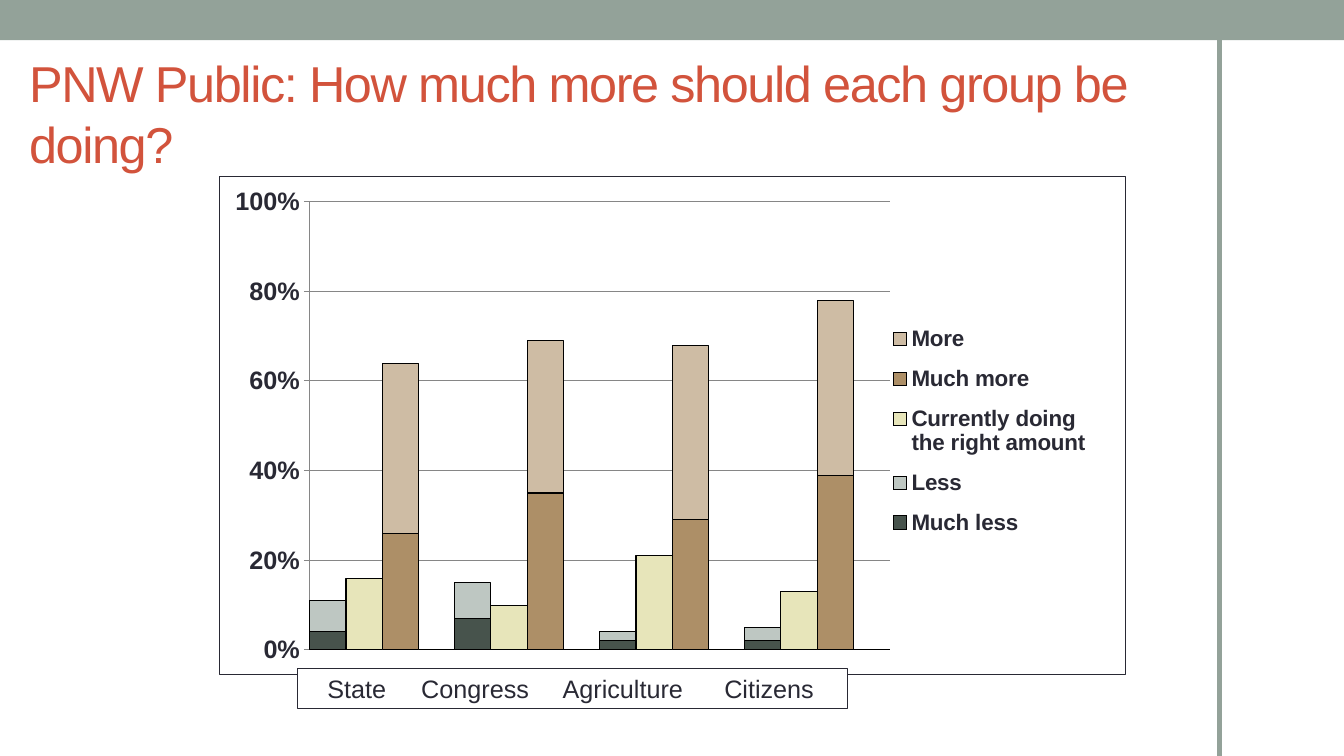
from dataclasses import dataclass

from lxml.etree import SubElement
from pptx import Presentation
from pptx.chart.chart import Chart
from pptx.chart.data import CategoryChartData
from pptx.dml.color import RGBColor
from pptx.enum.chart import (XL_CHART_TYPE, XL_LEGEND_POSITION,
                             XL_TICK_LABEL_POSITION, XL_TICK_MARK)
from pptx.enum.shapes import MSO_CONNECTOR, MSO_SHAPE
from pptx.enum.text import MSO_ANCHOR, PP_ALIGN
from pptx.oxml import parse_xml
from pptx.oxml.ns import nsdecls, qn
from pptx.slide import Slide
from pptx.util import Pt

FACE = "Arial"
INK = "292934"
SAGE = "93A299"
GRID = "868686"
GROUPS = ["State", "Congress", "Agriculture", "Citizens"]
SLOTS = 4  # less, right amount, more, gap


@dataclass
class Answer:
    name: str
    slot: int
    shares: list[float]
    color: str


ANSWERS = [
    Answer("Much less", 0, [0.04, 0.07, 0.02, 0.02], "47534C"),
    Answer("Less", 0, [0.07, 0.08, 0.02, 0.03], "BEC7C2"),
    Answer("Currently doing the right amount", 1, [0.16, 0.10, 0.21, 0.13], "E7E5BA"),
    Answer("Much more", 2, [0.26, 0.35, 0.29, 0.39], "AD8F67"),
    Answer("More", 2, [0.38, 0.34, 0.39, 0.39], "CEBCA4"),
]


def paint(item, color: str) -> None:
    """Give a fill, or the fill of a line, one solid colour."""
    item.solid()
    item.fore_color.rgb = RGBColor.from_string(color)


def style(font, size: float, color: str = INK, bold: bool = False) -> None:
    font.name, font.size, font.bold = FACE, Pt(size), bold
    paint(font.fill, color)


def stroke(line, color: str, width: float = 0.75) -> None:
    paint(line.fill, color)
    line.width = Pt(width)


def add_frame(slide: Slide) -> None:
    """Draw the top band and the rule at the right."""
    band = slide.shapes.add_shape(MSO_SHAPE.RECTANGLE, 0, 0, Pt(960), Pt(28.8))
    band.shadow.inherit = False
    paint(band.fill, SAGE)
    band.line.fill.background()
    rule = slide.shapes.add_connector(
        MSO_CONNECTOR.STRAIGHT, Pt(871.2), Pt(27.4), Pt(871.2), Pt(540))
    stroke(rule.line, SAGE, 3.25)
    SubElement(rule._element.spPr, qn("a:effectLst"))


def add_title(slide: Slide) -> None:
    box = slide.shapes.add_textbox(Pt(13.7), Pt(41.8), Pt(803), Pt(77.8))
    frame = box.text_frame
    frame.word_wrap = True
    frame.vertical_anchor = MSO_ANCHOR.MIDDLE
    frame.text = "PNW Public: How much more should each group be doing?"
    run = frame.paragraphs[0].runs[0]
    style(run.font, 36, "D2533C")
    run._r.get_or_add_rPr().set("spc", "-100")


def place(part, index: int, x: float, y: float, w: float, h: float,
          inner: bool = False) -> None:
    """Fix a chart part at fractions of the chart area."""
    for old in part.findall(qn("c:layout")):
        part.remove(old)
    target = '<c:layoutTarget val="inner"/>' if inner else ""
    part.insert(index, parse_xml(
        f'<c:layout {nsdecls("c")}><c:manualLayout>{target}'
        '<c:xMode val="edge"/><c:yMode val="edge"/>'
        f'<c:x val="{x}"/><c:y val="{y}"/><c:w val="{w}"/><c:h val="{h}"/>'
        '</c:manualLayout></c:layout>'))


def style_axes(chart: Chart) -> None:
    groups = chart.category_axis
    groups.tick_label_position = XL_TICK_LABEL_POSITION.NONE
    groups.major_tick_mark = XL_TICK_MARK.NONE
    groups.has_major_gridlines = False
    stroke(groups.format.line, "000000")
    shares = chart.value_axis
    shares.minimum_scale, shares.maximum_scale, shares.major_unit = 0, 1, 0.2
    shares.major_tick_mark = XL_TICK_MARK.OUTSIDE
    shares.tick_labels.number_format = "0%"
    shares.tick_labels.number_format_is_linked = False
    style(shares.tick_labels.font, 18, bold=True)
    stroke(shares.format.line, GRID)
    stroke(shares.major_gridlines.format.line, GRID)


def add_bars(slide: Slide) -> None:
    data = CategoryChartData(number_format="0%")
    count = SLOTS * len(GROUPS)
    data.categories = [str(n + 1) for n in range(count)]
    for answer in ANSWERS:
        row: list[float | None] = [None] * count
        row[answer.slot::SLOTS] = answer.shares
        data.add_series(answer.name, row)
    chart = slide.shapes.add_chart(
        XL_CHART_TYPE.COLUMN_STACKED, Pt(156.2), Pt(126), Pt(648), Pt(356.4), data).chart
    chart.has_title = False
    style(chart.font, 10)
    plot = chart.plots[0]
    plot.gap_width, plot.overlap, plot.vary_by_categories = 0, 100, False
    for series, answer in zip(plot.series, ANSWERS):
        paint(series.format.fill, answer.color)
        stroke(series.format.line, "000000")
    style_axes(chart)
    chart.has_legend = True
    legend = chart.legend
    legend.position = XL_LEGEND_POSITION.RIGHT
    legend.include_in_layout = False
    style(legend.font, 16, bold=True)
    place(legend._element, 1, 0.73, 0.27, 0.24, 0.48)
    area = chart._chartSpace.find(qn("c:chart"))
    place(area.find(qn("c:plotArea")), 0, 0.1, 0.05, 0.64, 0.9, inner=True)
    area.addnext(parse_xml(
        f'<c:spPr {nsdecls("c", "a")}>'
        '<a:solidFill><a:srgbClr val="FFFFFF"/></a:solidFill>'
        f'<a:ln w="{Pt(0.75)}"><a:solidFill><a:srgbClr val="{INK}"/></a:solidFill></a:ln>'
        '</c:spPr>'))


def add_names(slide: Slide) -> None:
    """Set the group names below the bars, spaced by tab stops."""
    box = slide.shapes.add_shape(
        MSO_SHAPE.RECTANGLE, Pt(212.4), Pt(477.4), Pt(393.1), Pt(28.8))
    box.shadow.inherit = False
    paint(box.fill, "FFFFFF")
    stroke(box.line, INK)
    frame = box.text_frame
    frame.word_wrap = True
    frame.vertical_anchor = MSO_ANCHOR.MIDDLE
    frame.margin_left = Pt(21.5)
    frame.text = "\t".join(GROUPS)
    line = frame.paragraphs[0]
    line.alignment = PP_ALIGN.LEFT
    tabs = SubElement(line._p.get_or_add_pPr(), qn("a:tabLst"))
    for stop in (67, 168, 283.5):
        SubElement(tabs, qn("a:tab"), pos=str(Pt(stop)), algn="l")
    for run in line.runs:
        style(run.font, 18)


def main() -> None:
    deck = Presentation()
    deck.slide_width, deck.slide_height = Pt(960), Pt(540)
    slide = deck.slides.add_slide(deck.slide_layouts[6])
    add_frame(slide)
    add_title(slide)
    add_bars(slide)
    add_names(slide)
    deck.save("out.pptx")


if __name__ == "__main__":
    main()
